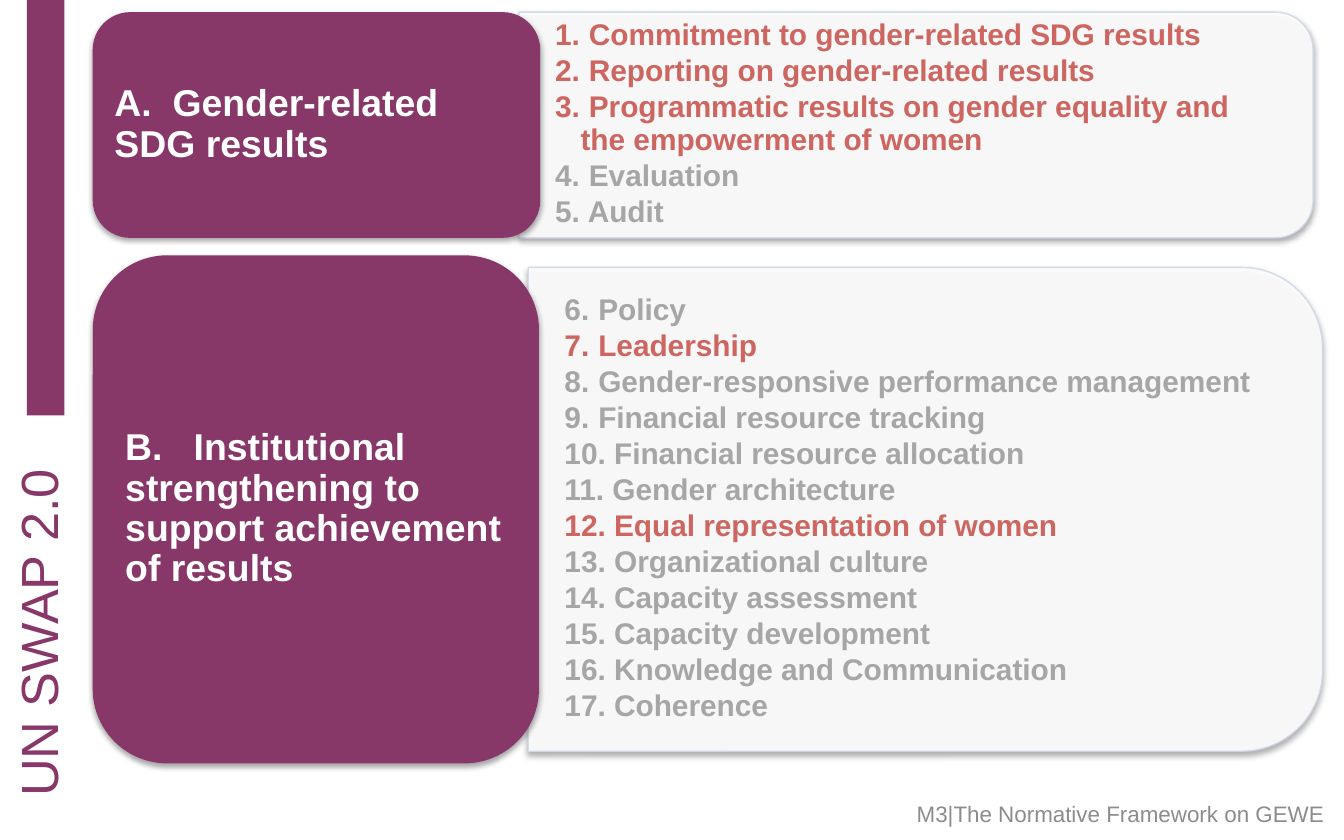
import pptx
import pptx.util
import pptx.dml.color
import pptx.enum.shapes
import pptx.enum.text
import pptx.oxml
import pptx.oxml.ns

Inches, Pt = pptx.util.Inches, pptx.util.Pt
Shape = pptx.enum.shapes.MSO_SHAPE
Align = pptx.enum.text.PP_ALIGN
Anchor = pptx.enum.text.MSO_ANCHOR
rgb = pptx.dml.color.RGBColor.from_string

COLORS = {"plum": "873768", "coral": "CD6660", "grey": "A6A6A6",
          "footer": "8C8C8C", "white": "FFFFFF", "edge": "D0D8E8"}
NS = pptx.oxml.ns.nsdecls("a")
SHADOW = (f'<a:effectLst {NS}><a:outerShdw blurRad="{Pt(3.1)}" dist="{Pt(1.8)}" dir="5400000" '
          'rotWithShape="0"><a:srgbClr val="000000"><a:alpha val="35000"/></a:srgbClr>'
          '</a:outerShdw></a:effectLst>')


def write(frame, text, size, color, bold=False, align=Align.LEFT, anchor=Anchor.MIDDLE,
          insets=(0.1, 0.05), spacing=1.0, after=0, number_from=None):
    """Add one paragraph; number_from makes it part of a numbered list."""
    frame.word_wrap = True
    frame.auto_size = pptx.enum.text.MSO_AUTO_SIZE.NONE
    frame.vertical_anchor = anchor
    frame.margin_left = frame.margin_right = Inches(insets[0])
    frame.margin_top = frame.margin_bottom = Inches(insets[1])
    paragraph = frame.paragraphs[0] if not frame.text else frame.add_paragraph()
    paragraph.alignment = align
    paragraph.line_spacing = spacing
    paragraph.space_before, paragraph.space_after = Pt(0), Pt(after)
    run = paragraph.add_run()
    run.text = text
    run.font.name, run.font.size, run.font.bold = "Arial", Pt(size), bold
    run.font.color.rgb = rgb(COLORS[color])
    if number_from:
        properties = paragraph._p.get_or_add_pPr()
        properties.set("marL", str(Inches(0.19)))
        properties.set("indent", str(-Inches(0.19)))
        properties.append(pptx.oxml.parse_xml(
            f'<a:buAutoNum {NS} type="arabicPeriod" startAt="{number_from}"/>'))


def add_block(kind, left, top, width, height, fill, shadow=True):
    block = slide.shapes.add_shape(kind, *map(Inches, (left, top, width, height)))
    block.fill.solid()
    block.fill.fore_color.rgb = rgb(COLORS[fill])
    block.line.fill.background()
    block.shadow.inherit = False
    if shadow:
        properties = block._element.spPr
        empty = properties.find(pptx.oxml.ns.qn("a:effectLst"))
        properties.replace(empty, pptx.oxml.parse_xml(SHADOW))
    return block


deck = pptx.Presentation()
deck.slide_width, deck.slide_height = Inches(10), Inches(6.25)
slide = deck.slides.add_slide(deck.slide_layouts.get_by_name("Two Content"))
heading, *indicator_lists = slide.placeholders

add_block(Shape.RECTANGLE, 0.2, 0, 0.28, 3.09, "plum", shadow=False)

heading.left, heading.top, heading.width, heading.height = map(Inches, (-1.26, 4.43, 3.07, 0.56))
heading.rotation = 270
write(heading.text_frame, "UN SWAP 2.0", 28, "plum", align=Align.CENTER, anchor=Anchor.TOP)

# Boxes are left, top, width, height; each indicator is its text and whether it is highlighted
areas = [
    {"label": "A.  Gender-related SDG results", "first": 1,
     "card": (0.69, 0.09, 3.33, 1.68), "panel": (3.86, 0.09, 5.91, 1.68),
     "list": (3.86, 0.17, 5.83, 1.51),
     "indicators": [("Commitment to gender-related SDG results", True),
                    ("Reporting on gender-related results", True),
                    ("Programmatic results on gender equality and the empowerment of women", True),
                    ("Evaluation", False), ("Audit", False)]},
    {"label": "B.   Institutional strengthening to support achievement of results", "first": 6,
     "card": (0.69, 1.9, 3.32, 3.78), "panel": (3.93, 1.99, 5.91, 3.6),
     "list": (3.93, 2.16, 5.73, 3.25),
     "indicators": [("Policy", False), ("Leadership", True),
                    ("Gender-responsive performance management", False),
                    ("Financial resource tracking", False),
                    ("Financial resource allocation", False),
                    ("Gender architecture", False), ("Equal representation of women", True),
                    ("Organizational culture", False), ("Capacity assessment", False),
                    ("Capacity development", False), ("Knowledge and Communication", False),
                    ("Coherence", False)]},
]

for area, indicator_list in zip(areas, indicator_lists):
    # The panel is turned a quarter so that its two round corners face right
    left, top, width, height = area["panel"]
    turn = (width - height) / 2
    panel = add_block(Shape.ROUND_2_SAME_RECTANGLE, left + turn, top - turn, height, width, "white")
    panel.rotation = 90
    panel.line.color.rgb = rgb(COLORS["edge"])
    panel.line.width = Pt(0.75)
    for color in panel._element.spPr.iter(pptx.oxml.ns.qn("a:srgbClr")):
        if color.get("val") != "000000":
            color.append(pptx.oxml.parse_xml(f'<a:alpha {NS} val="90000"/>'))

    slide.shapes._spTree.append(indicator_list._element)  # bring the list above its panel
    (indicator_list.left, indicator_list.top,
     indicator_list.width, indicator_list.height) = map(Inches, area["list"])
    for indicator, highlighted in area["indicators"]:
        write(indicator_list.text_frame, " " + indicator, 16, "coral" if highlighted else "grey",
              bold=True, insets=(0.27, 0.14), spacing=0.9, after=2, number_from=area["first"])

    card = add_block(Shape.ROUNDED_RECTANGLE, *area["card"], "plum")
    write(card.text_frame, area["label"], 20, "white", bold=True, insets=(0.08, 0.04), spacing=0.9)

footer = slide.shapes.add_textbox(*map(Inches, (3.62, 5.85, 6.38, 0.41)))
write(footer.text_frame, "M3|The Normative Framework on GEWE ", 12, "footer", align=Align.RIGHT)

deck.save("out.pptx")
